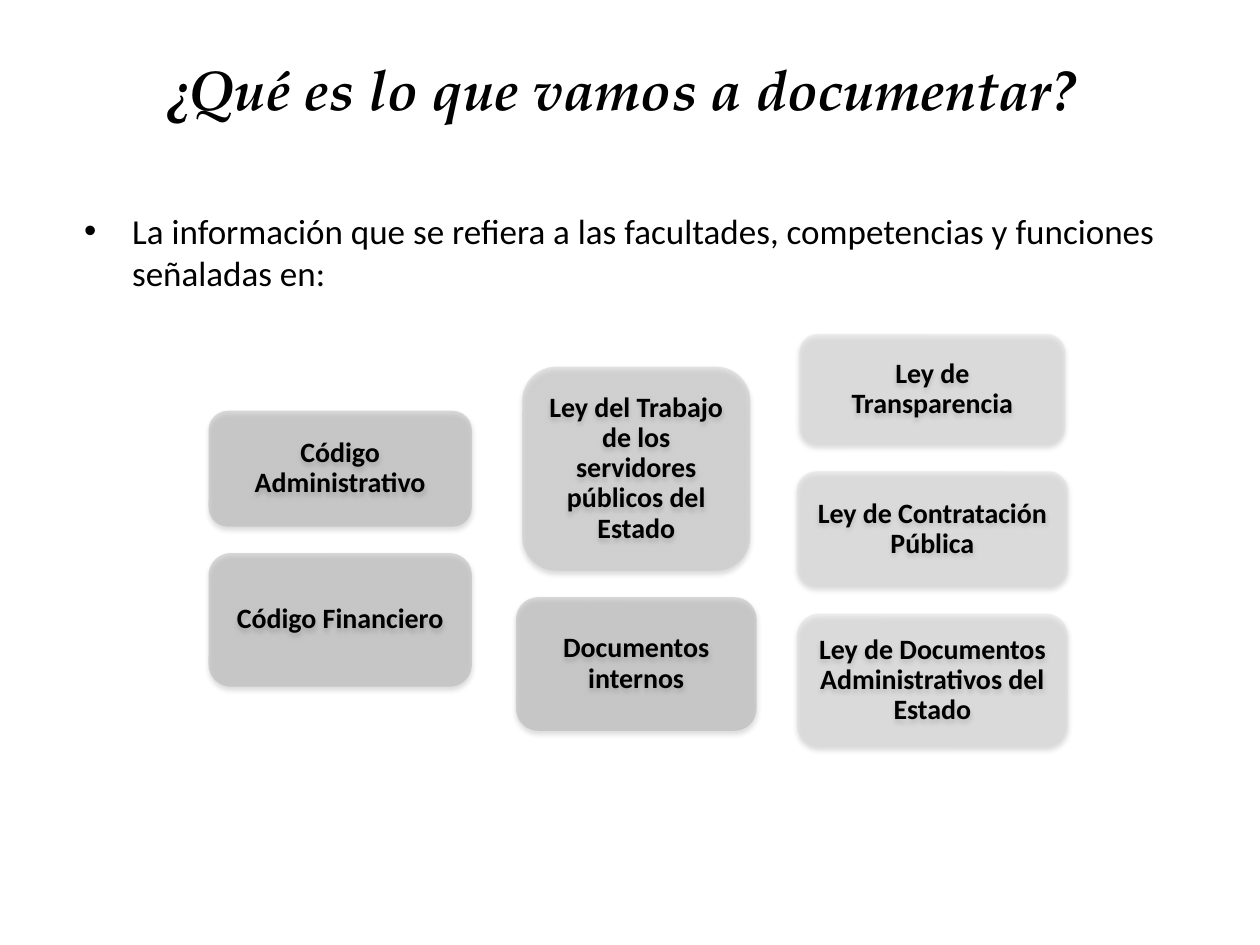
from lxml.etree import SubElement
from pptx import Presentation
from pptx.dml.color import RGBColor
from pptx.enum.shapes import MSO_SHAPE
from pptx.enum.text import MSO_ANCHOR, MSO_AUTO_SIZE, PP_ALIGN
from pptx.oxml.ns import qn
from pptx.util import Inches, Pt

TITLE = "¿Qué es lo que vamos a documentar?"
INTRO = ("La información que se refiera a las facultades, competencias "
         "y funciones señaladas en:")
DARK, MEDIUM, LIGHT = "A6A6A6", "BFBFBF", "D9D9D9"
COLUMNS = [
    (3.26, [("Código Administrativo", 2.09, 0.92, DARK),
            ("Código Financiero", 2.09, 1.06, DARK)]),
    (2.91, [("Ley del Trabajo de los servidores públicos del Estado", 1.81, 1.62, MEDIUM),
            ("Documentos internos", 1.91, 1.06, DARK)]),
    (2.65, [("Ley de Transparencia", 2.11, 0.88, LIGHT),
            ("Ley de Contratación Pública", 2.15, 0.92, LIGHT),
            ("Ley de Documentos Administrativos del Estado", 2.15, 1.06, LIGHT)]),
]
FIRST_CENTER, COLUMN_STEP, GAP = 2.7, 2.35, 0.21


def color(value):
    return RGBColor.from_string(value)


def format_text(paragraph, name, size, bold=False, italic=False):
    font = paragraph.runs[0].font
    font.name, font.size, font.bold, font.italic = name, Pt(size), bold, italic
    font.color.rgb = color("000000")


def add_text(slide, text, left, top, width, height):
    box = slide.shapes.add_textbox(*map(Inches, (left, top, width, height)))
    box.text_frame.word_wrap = True
    box.text_frame.text = text
    return box.text_frame


def add_alpha(color_element, percent):
    SubElement(color_element, qn("a:alpha"), val=str(percent * 1000))


def add_soft_shadow(shape):
    shape.shadow.inherit = False
    effects = shape._element.spPr.find(qn("a:effectLst"))
    shadow = SubElement(effects, qn("a:outerShdw"), blurRad=str(Pt(3.1)),
                        dist=str(Pt(1.8)), dir="5400000", rotWithShape="0")
    add_alpha(SubElement(shadow, qn("a:srgbClr"), val="000000"), 35)


def add_card(slide, text, left, top, width, height, fill):
    card = slide.shapes.add_shape(MSO_SHAPE.ROUNDED_RECTANGLE,
                                  *map(Inches, (left, top, width, height)))
    card.fill.solid()
    card.fill.fore_color.rgb = color(fill)
    add_alpha(card._element.spPr.find(qn("a:solidFill"))[0], 40)
    card.line.fill.background()
    add_soft_shadow(card)
    frame = card.text_frame
    frame.word_wrap = True
    frame.vertical_anchor = MSO_ANCHOR.MIDDLE
    frame.margin_left = frame.margin_right = Inches(0.07)
    frame.margin_top = frame.margin_bottom = Inches(0.07)
    frame.text = text
    paragraph = frame.paragraphs[0]
    paragraph.alignment = PP_ALIGN.CENTER
    paragraph.line_spacing = 0.9
    format_text(paragraph, "Calibri", 16, bold=True)


def main():
    presentation = Presentation()
    presentation.slide_width, presentation.slide_height = Inches(10), Inches(7.5)
    slide = presentation.slides.add_slide(presentation.slide_layouts[6])

    title = add_text(slide, TITLE, 0.54, 0.38, 8.77, 0.64)
    title.auto_size = MSO_AUTO_SIZE.SHAPE_TO_FIT_TEXT
    title.paragraphs[0].alignment = PP_ALIGN.CENTER
    format_text(title.paragraphs[0], "TeX Gyre Pagella", 32, bold=True, italic=True)

    intro = add_text(slide, INTRO, 0.57, 1.61, 8.72, 0.77).paragraphs[0]
    properties = intro._p.get_or_add_pPr()
    properties.set("marL", str(Inches(0.38)))
    properties.set("indent", str(Inches(-0.38)))
    SubElement(properties, qn("a:buFont"), typeface="Arial")
    SubElement(properties, qn("a:buChar"), char="•")
    format_text(intro, "Calibri", 20)

    for column, (top, cards) in enumerate(COLUMNS):
        center = FIRST_CENTER + column * COLUMN_STEP
        for text, width, height, fill in cards:
            add_card(slide, text, center - width / 2, top, width, height, fill)
            top += height + GAP

    presentation.save("out.pptx")


if __name__ == "__main__":
    main()
